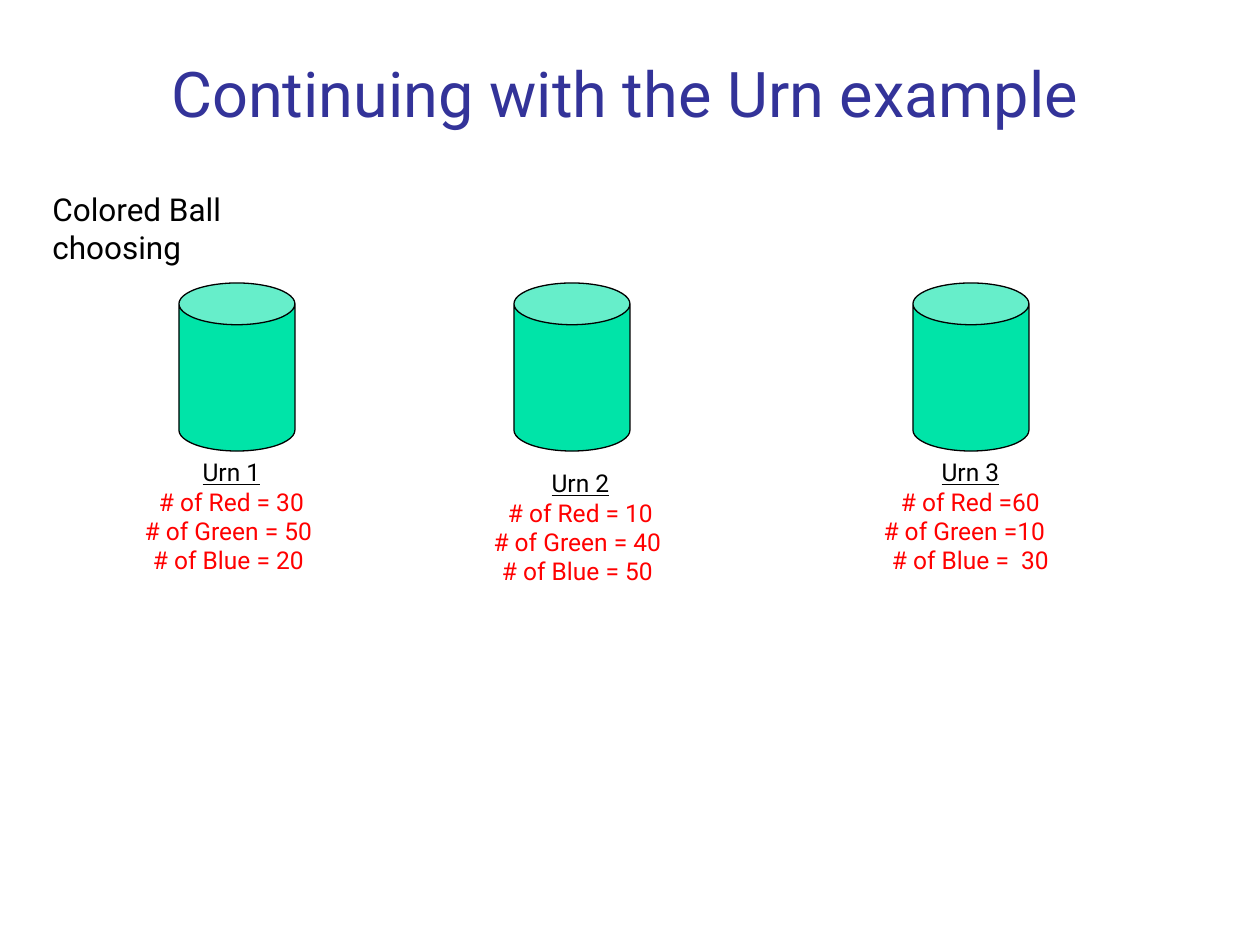
"""Build the slide comparing the ball counts of three urns."""
from pptx import Presentation
from pptx import util as u
from pptx.dml.color import RGBColor
from pptx.enum import shapes, text

PX = 914400 / 126
NAVY = RGBColor(0x33, 0x33, 0x99)
GREEN = RGBColor(0x00, 0xE4, 0xA8)
BLACK = RGBColor(0x00, 0x00, 0x00)
RED = RGBColor(0xFF, 0x00, 0x00)


def box(*px):
    return [u.Emu(round(n * PX)) for n in px]


def add_run(p, words, size, color):
    r = p.add_run()
    r.text = words
    r.font.name = "Roboto"
    r.font.size = u.Pt(size)
    r.font.color.rgb = color
    return r


prs = Presentation()
prs.slide_width, prs.slide_height = box(1260, 945)
s = prs.slides.add_slide(prs.slide_layouts[6])

tf = s.shapes.add_textbox(*box(159, 29, 1074, 107)).text_frame
tf.word_wrap = True
tf.vertical_anchor = text.MSO_ANCHOR.BOTTOM
add_run(tf.paragraphs[0], "Continuing with the Urn example", 36, NAVY)

tf = s.shapes.add_textbox(*box(40, 184, 326, 50)).text_frame
tf.word_wrap = True
p = tf.paragraphs[0]
add_run(p, "Colored Ball", 18, BLACK)
p.add_line_break()
add_run(p, "choosing", 18, BLACK)

urns = [
    (179, 130, 451, "Urn 1", ["# of Red = 30", "# of Green = 50 ", "# of Blue = 20 "]),
    (514, 479, 462, "Urn 2", ["# of Red = 10", "# of Green = 40 ", "# of Blue = 50 "]),
    (913, 869, 451, "Urn 3", ["# of Red =60", "# of Green =10  ", "# of Blue =  30"]),
]
for can_left, label_left, label_top, name, counts in urns:
    sp = s.shapes.add_shape(shapes.MSO_SHAPE.CAN, *box(can_left, 283, 116, 168))
    sp.adjustments[0] = 0.36
    sp.shadow.inherit = False
    sp.fill.solid()
    sp.fill.fore_color.rgb = GREEN
    sp.line.color.rgb = BLACK
    sp.line.width = u.Pt(0.75)

    tf = s.shapes.add_textbox(*box(label_left, label_top, 203, 130)).text_frame
    tf.word_wrap = False
    p = tf.paragraphs[0]
    p.alignment = text.PP_ALIGN.CENTER
    add_run(p, name, 14, BLACK).font.underline = True
    for count in counts:
        p = tf.add_paragraph()
        p.alignment = text.PP_ALIGN.CENTER
        add_run(p, count, 14, RED)

prs.save("out.pptx")
